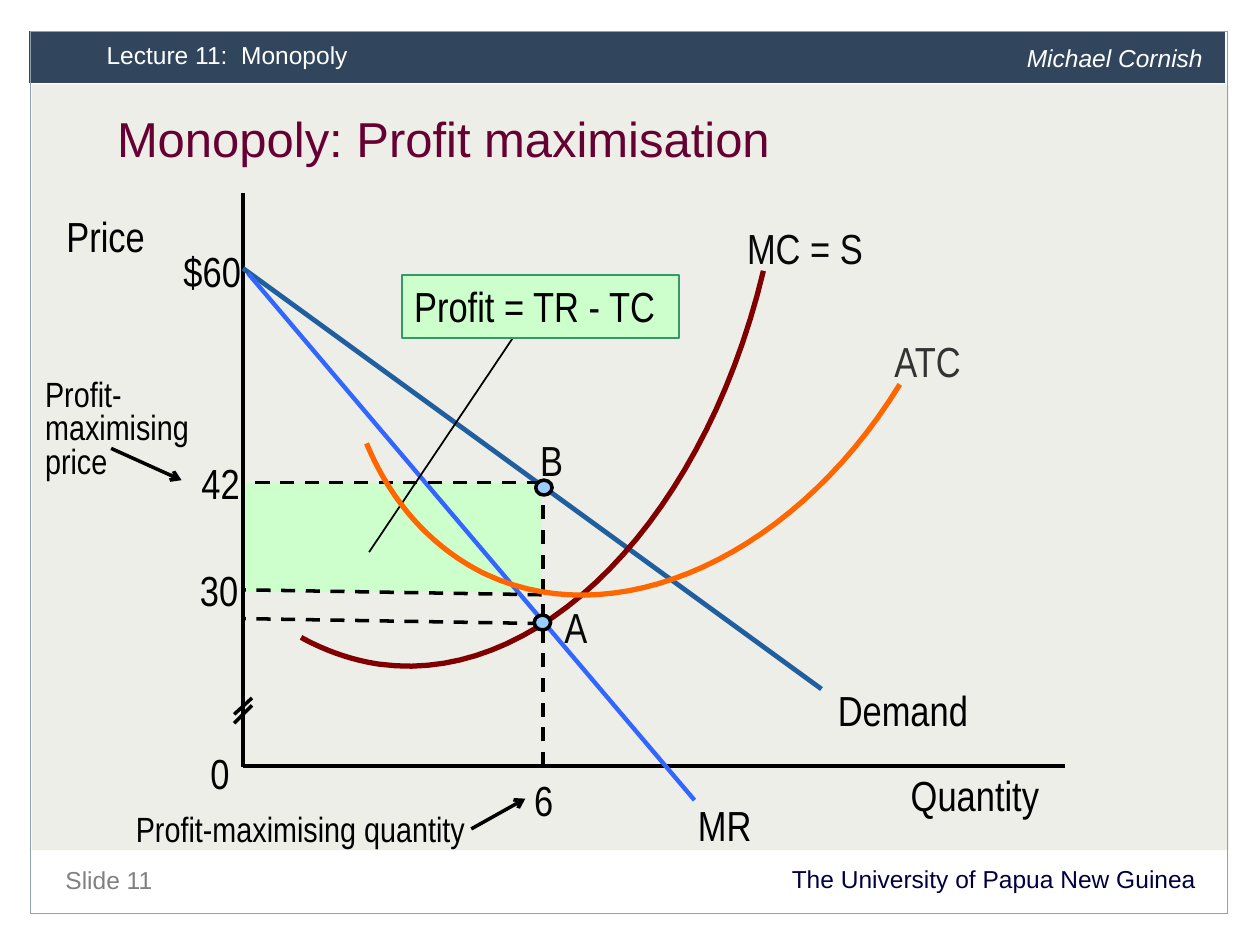
from lxml import etree
from pptx import Presentation, util as u
from pptx.dml.color import RGBColor
from pptx.enum import dml, shapes, text
from pptx.oxml.ns import qn


def color(hex_code):
    return RGBColor.from_string(hex_code)


def write(frame, words, size=24, font="Arial Narrow", ink="000000", italic=False,
          align=text.PP_ALIGN.LEFT, spacing=None):
    """Fill a text frame, one paragraph per line of words."""
    frame.word_wrap = True
    frame.vertical_anchor = text.MSO_ANCHOR.TOP
    for index, line in enumerate(words.split("\n")):
        para = frame.add_paragraph() if index else frame.paragraphs[0]
        para.alignment = align
        if spacing:
            para.line_spacing = spacing
        span = para.add_run()
        span.text = line
        span.font.size = u.Pt(size)
        span.font.name = font
        span.font.italic = italic
        span.font.color.rgb = color(ink)


deck = Presentation()
deck.slide_width, deck.slide_height = u.Cm(25.4), u.Cm(19.05)
page = deck.slides.add_slide(deck.slide_layouts[6])

# Page panels and the profit area: place, fill, line colour, line width
panels = [
    ((0.64, 1.7, 24.13, 15.44), "EDEEE8", None, 0),
    ((0.58, 0.61, 24.13, 1.07), "31465C", "FFFFFF", 0.5),
    ((0.61, 0.64, 24.13, 17.78), None, "91A1B0", 0.75),
    ((4.9, 9.73, 6.02, 2.21), "CCFFCC", None, 0),
]
for place, fill, edge, width in panels:
    panel = page.shapes.add_shape(shapes.MSO_SHAPE.RECTANGLE, *map(u.Cm, place))
    panel.shadow.inherit = False
    if fill:
        panel.fill.solid()
        panel.fill.fore_color.rgb = color(fill)
    else:
        panel.fill.background()
    if edge:
        panel.line.color.rgb = color(edge)
        panel.line.width = u.Pt(width)
    else:
        panel.line.fill.background()

# Header, title and footer
university = "The University of Papua New Guinea"
page_texts = [
    (university, (1.07, 17.35, 23.29, 0.81),
     dict(size=14, ink="000041", align=text.PP_ALIGN.RIGHT, spacing=u.Pt(15))),
    ("Slide 11", (1.07, 17.2, 11, 0.86), dict(size=14, ink="808080", spacing=u.Pt(20))),
    ("Lecture 11:  Monopoly", (1.9, 0.64, 15.57, 0.94),
     dict(size=14, ink="FFFFFF", spacing=u.Pt(18))),
    ("Michael Cornish", (20.45, 0.71, 4.17, 0.94),
     dict(size=14, ink="FFFFFF", italic=True, spacing=u.Pt(18))),
    ("Monopoly: Profit maximisation", (2.11, 2.34, 20.65, 1.9),
     dict(size=28, ink="660033", spacing=u.Pt(26))),
]
for words, place, style in page_texts:
    box = page.shapes.add_textbox(*map(u.Cm, place))
    write(box.text_frame, words, font="Arial", **style)

# Cost curves: each is a chain of cubic Bézier arcs sharing end points
curves = [
    ("800000", [(15.39, 5.46), (14.2, 10.46), (10.9, 13.84), (7.65, 13.39),
                (7.11, 13.31), (6.58, 13.13), (6.07, 12.85)]),
    ("FF6600", [(18.14, 7.75), (16.03, 11.2), (12.47, 12.83), (9.8, 11.58),
                (8.74, 11.07), (7.9, 10.16), (7.39, 8.94)]),
]
STEPS = 30

# Straight lines: from x, y to x, y, colour, width, kind
lines = [
    (4.9, 3.89, 4.9, 15.47, "000000", 2.5, "solid"),
    (4.9, 15.44, 21.46, 15.44, "000000", 2.5, "solid"),
    (4.9, 5.41, 16.56, 13.89, "205F9F", 2.75, "solid"),
    (5, 5.51, 14, 16.13, "3366FF", 2.5, "solid"),
    (10.95, 15.44, 10.95, 9.8, "000000", 2, "dash"),
    (10.9, 9.73, 4.9, 9.73, "000000", 2, "dash"),
    (10.92, 12.57, 4.9, 12.47, "000000", 2, "dash"),
    (10.92, 11.99, 4.9, 11.89, "000000", 2, "dash"),
    (5.08, 14.22, 4.72, 14.58, "000000", 2, "solid"),
    (5.08, 14.07, 4.72, 14.4, "000000", 2, "solid"),
    (9.5, 16.71, 10.59, 16.1, "000000", 2, "arrow"),
    (2.24, 9.04, 3.66, 9.68, "000000", 2, "arrow"),
    (10.36, 6.78, 7.44, 11.13, "000000", 1, "solid"),
]
for *ends, ink, width, kind in lines:
    line = page.shapes.add_connector(shapes.MSO_CONNECTOR.STRAIGHT, *map(u.Cm, ends))
    line.line.color.rgb = color(ink)
    line.line.width = u.Pt(width)
    if kind == "dash":
        line.line.dash_style = dml.MSO_LINE.DASH
    if kind == "arrow":
        etree.SubElement(line.line._get_or_add_ln(), qn("a:tailEnd"), type="arrow")
    etree.SubElement(line._element.spPr, qn("a:effectLst"))

for ink, knots in curves:
    points = []
    for start in range(0, len(knots) - 1, 3):
        arc = knots[start:start + 4]
        for step in range(1, STEPS + 1):
            t = step / STEPS
            weights = ((1 - t) ** 3, 3 * t * (1 - t) ** 2, 3 * t ** 2 * (1 - t), t ** 3)
            points.append(tuple(u.Cm(sum(w * knot[axis] for w, knot in zip(weights, arc)))
                                for axis in (0, 1)))
    builder = page.shapes.build_freeform(*map(u.Cm, knots[0]))
    builder.add_line_segments(points, close=False)
    curve = builder.convert_to_shape()
    curve.shadow.inherit = False
    curve.fill.background()
    curve.line.color.rgb = color(ink)
    curve.line.width = u.Pt(3)

for left, top in [(10.8, 9.68), (10.77, 12.4)]:
    dot = page.shapes.add_shape(shapes.MSO_SHAPE.OVAL, u.Cm(left), u.Cm(top),
                                u.Cm(0.33), u.Cm(0.3))
    dot.shadow.inherit = False
    dot.fill.solid()
    dot.fill.fore_color.rgb = color("99CCFF")
    dot.line.color.rgb = color("000000")
    dot.line.width = u.Pt(2)

profit = page.shapes.add_shape(shapes.MSO_SHAPE.RECTANGLE,
                               u.Cm(8.1), u.Cm(5.54), u.Cm(5.59), u.Cm(1.27))
profit.shadow.inherit = False
profit.fill.solid()
profit.fill.fore_color.rgb = color("CCFFCC")
profit.line.color.rgb = color("339966")
profit.line.width = u.Pt(1.25)
write(profit.text_frame, "Profit = TR - TC")

# Diagram labels: words, left, top, width, colour
labels = [
    ("Price", 1.09, 4.11, 4.55, "000000"),
    ("Quantity", 18.11, 15.39, 3.96, "000000"),
    ("Demand", 16.64, 13.67, 5.28, "000000"),
    ("MR", 13.82, 16, 2.54, "000000"),
    ("0", 3.99, 14.94, 0.91, "000000"),
    ("MC = S", 14.81, 4.37, 2.9, "080808"),
    ("$60", 3.45, 4.83, 2.08, "000000"),
    ("42", 3.81, 9.09, 1.93, "000000"),
    ("30", 3.78, 11.25, 2.54, "000000"),
    ("6", 10.52, 15.49, 1.09, "000000"),
    ("B", 10.64, 8.64, 0.91, "080808"),
    ("A", 11.13, 12.01, 0.91, "080808"),
    ("ATC", 17.78, 6.63, 2.01, "333333"),
]
for words, left, top, width, ink in labels:
    box = page.shapes.add_textbox(u.Cm(left), u.Cm(top), u.Cm(width), u.Cm(1.12))
    write(box.text_frame, words, ink=ink)

notes = [
    ("Profit-maximising quantity", (2.49, 16.31, 9.5, 0.94)),
    ("Profit-\nmaximising\nprice", (0.66, 7.54, 3.43, 2.31)),
]
for words, place in notes:
    box = page.shapes.add_textbox(*map(u.Cm, place))
    write(box.text_frame, words, size=20, spacing=0.8)

deck.save("out.pptx")
